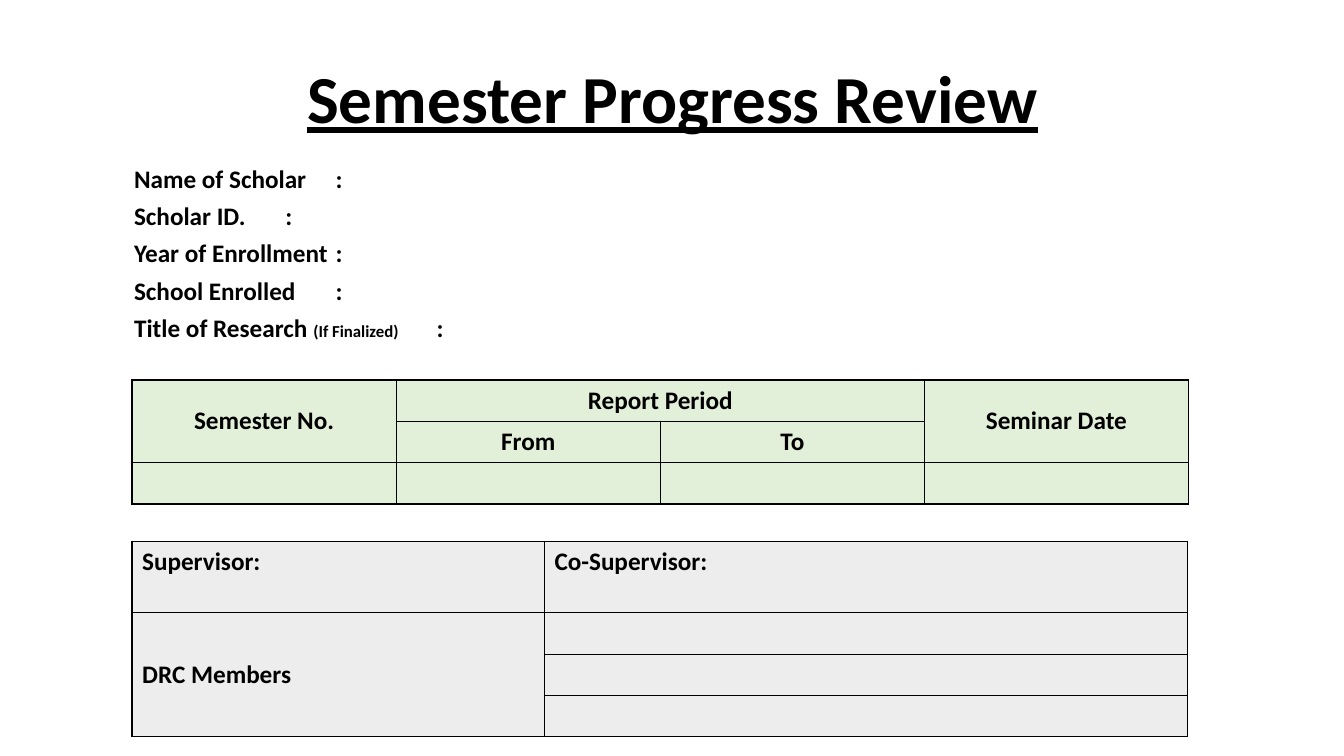
from dataclasses import dataclass

from lxml.etree import SubElement
from pptx import Presentation
from pptx.dml.color import RGBColor
from pptx.enum.text import MSO_ANCHOR as Anchor, MSO_AUTO_SIZE as AutoSize, PP_ALIGN as Align
from pptx.oxml import parse_xml
from pptx.oxml.ns import nsdecls, qn
from pptx.util import Inches, Pt

COLOURS = {"ink": "000000", "period": "E2F0D9", "committee": "EDEDED"}
BOLD_TEXT = {"name": "Calibri", "size": Pt(18), "bold": True}
TITLE_TEXT = BOLD_TEXT | {"size": Pt(48), "underline": True}
NOTE_TEXT = BOLD_TEXT | {"size": Pt(12)}
FIELD_SPACING = {"alignment": Align.LEFT, "line_spacing": 1.0,
                 "space_before": Pt(0), "space_after": Pt(5)}


@dataclass(frozen=True)
class Field:
    label: str
    note: str = ""


@dataclass(frozen=True)
class Entry:
    row: int
    column: int
    text: str
    rows: int = 1
    columns: int = 1


@dataclass(frozen=True)
class Grid:
    top: float
    widths: tuple[float, ...]
    heights: tuple[float, ...]
    fill: str
    align: Align
    entries: tuple[Entry, ...]


FIELDS = (
    Field("Name of Scholar"),
    Field("Scholar ID."),
    Field("Year of Enrollment"),
    Field("School Enrolled"),
    Field("Title of Research ", "(If Finalized)"),
)

GRIDS = (
    Grid(3.77, (2.62,) * 4, (0.41,) * 3, "period", Align.CENTER, (
        Entry(0, 0, "Semester No.", rows=2),
        Entry(0, 1, "Report Period", columns=2),
        Entry(0, 3, "Seminar Date", rows=2),
        Entry(1, 1, "From"),
        Entry(1, 2, "To"),
    )),
    Grid(5.37, (4.09, 6.38), (0.71,) + (0.41,) * 3, "committee", Align.LEFT, (
        Entry(0, 0, "Supervisor:"),
        Entry(0, 1, "Co-Supervisor:"),
        Entry(1, 0, "DRC Members", rows=3),
    )),
)


def apply(target, values: dict) -> None:
    for attribute, value in values.items():
        setattr(target, attribute, value)


def place(target, left: float, top: float, width: float, height: float) -> None:
    apply(target, {"left": Inches(left), "top": Inches(top),
                   "width": Inches(width), "height": Inches(height)})


def add_words(paragraph, text: str, style: dict) -> None:
    run = paragraph.add_run()
    run.text = text
    apply(run.font, style)
    run.font.color.rgb = RGBColor.from_string(COLOURS["ink"])


def write_title(title) -> None:
    place(title, 1.67, 0.43, 10, 1.15)
    apply(title.text_frame, {"vertical_anchor": Anchor.MIDDLE, "auto_size": AutoSize.NONE})
    heading = title.text_frame.paragraphs[0]
    apply(heading, {"alignment": Align.CENTER, "line_spacing": 0.9})
    add_words(heading, "Semester Progress Review", TITLE_TEXT)


def write_fields(details) -> None:
    place(details, 1.23, 1.57, 10.55, 2.27)
    frame = details.text_frame
    apply(frame, {"vertical_anchor": Anchor.TOP, "auto_size": AutoSize.NONE, "word_wrap": True})
    for index, field in enumerate(FIELDS):
        line = frame.add_paragraph() if index else frame.paragraphs[0]
        apply(line, FIELD_SPACING)
        stops = SubElement(line._p.get_or_add_pPr(), qn("a:tabLst"))
        SubElement(stops, qn("a:tab"), pos=str(Inches(3)), algn="l")
        add_words(line, field.label, BOLD_TEXT)
        if field.note:
            add_words(line, field.note, NOTE_TEXT)
        add_words(line, "\t:", BOLD_TEXT)


def paint_cell(cell, fill: str) -> None:
    cell.fill.solid()
    cell.fill.fore_color.rgb = RGBColor.from_string(COLOURS[fill])
    properties = cell._tc.get_or_add_tcPr()
    for index, side in enumerate("LRTB"):
        properties.insert(index, parse_xml(
            f'<a:ln{side} {nsdecls("a")} w="{Pt(1)}"><a:solidFill>'
            f'<a:srgbClr val="{COLOURS["ink"]}"/></a:solidFill></a:ln{side}>'))


def add_grid(slide, grid: Grid) -> None:
    table = slide.shapes.add_table(
        len(grid.heights), len(grid.widths), Inches(1.31), Inches(grid.top),
        Inches(sum(grid.widths)), Inches(sum(grid.heights))).table
    apply(table, {"first_row": False, "horz_banding": False})
    for column, width in zip(table.columns, grid.widths):
        column.width = Inches(width)
    for row, height in zip(table.rows, grid.heights):
        row.height = Inches(height)
    for cell in table.iter_cells():
        paint_cell(cell, grid.fill)
    for entry in grid.entries:
        cell = table.cell(entry.row, entry.column)
        if entry.rows * entry.columns > 1:
            cell.merge(table.cell(entry.row + entry.rows - 1, entry.column + entry.columns - 1))
        cell.vertical_anchor = Anchor.MIDDLE if entry.rows > 1 else Anchor.TOP
        paragraph = cell.text_frame.paragraphs[0]
        paragraph.alignment = grid.align
        add_words(paragraph, entry.text, BOLD_TEXT)


def main() -> None:
    deck = Presentation()
    apply(deck, {"slide_width": Inches(13.33), "slide_height": Inches(7.5)})
    slide = deck.slides.add_slide(deck.slide_layouts[0])
    write_title(slide.shapes.title)
    write_fields(slide.placeholders[1])
    for grid in GRIDS:
        add_grid(slide, grid)
    deck.save("out.pptx")


if __name__ == "__main__":
    main()
